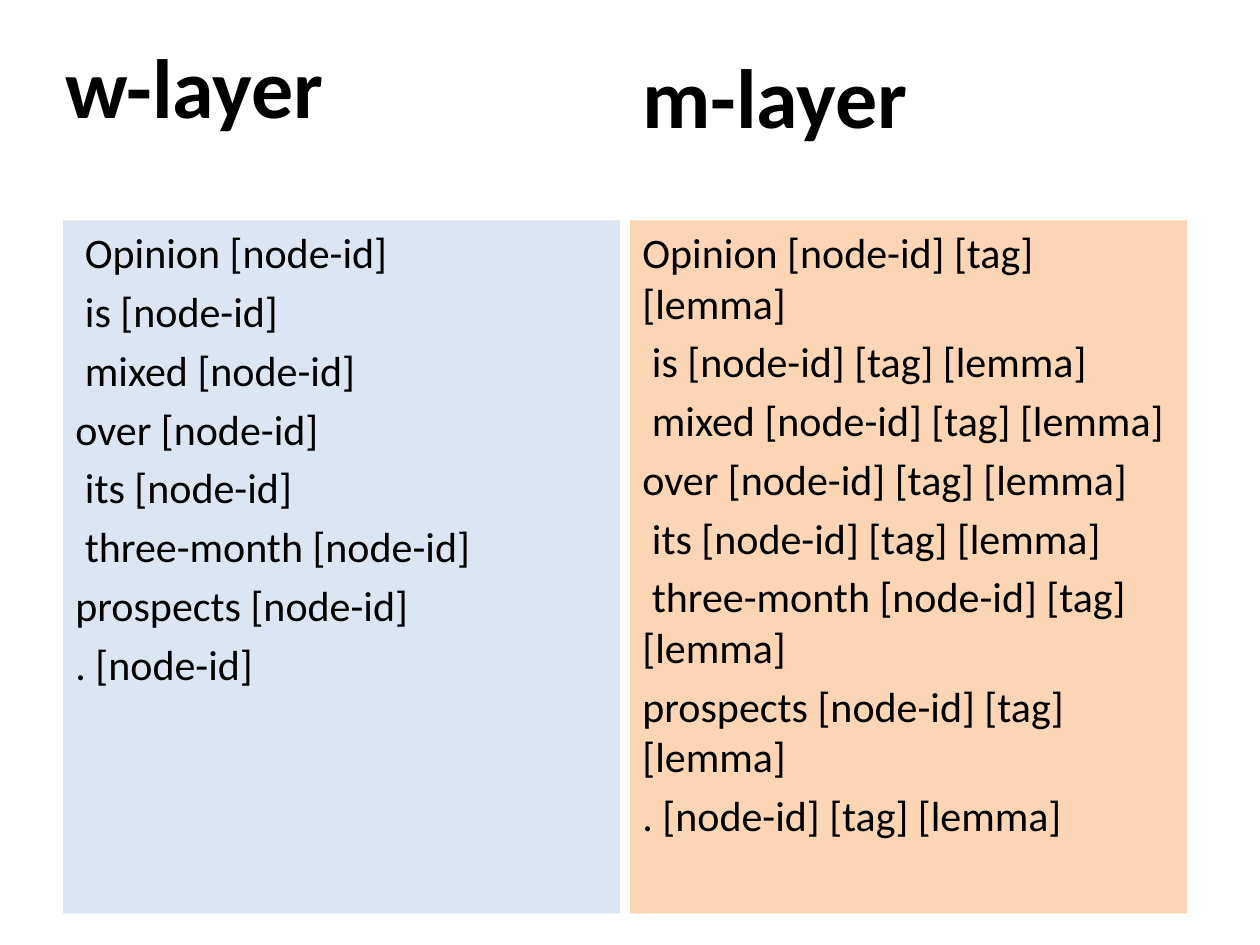
from dataclasses import dataclass

from pptx import Presentation
from pptx.dml.color import RGBColor
from pptx.enum.shapes import MSO_SHAPE
from pptx.enum.text import MSO_ANCHOR, PP_ALIGN
from pptx.slide import Slide
from pptx.text.text import TextFrame
from pptx.util import Inches, Pt

RECTANGLE = MSO_SHAPE.RECTANGLE
TOP, BOTTOM = MSO_ANCHOR.TOP, MSO_ANCHOR.BOTTOM
LEFT = PP_ALIGN.LEFT

PAGE_WIDTH, PAGE_HEIGHT = Inches(10), Inches(7.5)
COLORS = {"text": "000000", "w": "DCE6F2", "m": "FCD5B5"}
FONT = "Calibri"
SPACE_SHARE = 0.2

FIRST_COLUMN, COLUMN_PITCH, COLUMN_WIDTH = 0.05, 0.45, 0.442
TITLE_HEIGHT = 0.7 / 7.5
PANEL_TOP, PANEL_HEIGHT = 1.75 / 7.5, 5.5 / 7.5
WORDS = (" is", " mixed", "over", " its", " three-month", "prospects", ".")


@dataclass(frozen=True)
class Layer:
    title: str
    color: str
    title_shift: float
    title_top: float
    first_word: str
    fields: str

    def lines(self) -> list[str]:
        return [f"{word} {self.fields}" for word in (self.first_word, *WORDS)]


LAYERS = (
    Layer("w-layer", "w", -0.008, 0.056, " Opinion", "[node-id]"),
    Layer("m-layer", "m", 0, 0.5 / 7.5, "Opinion", "[node-id] [tag] [lemma]"),
)


def area(left: float, top: float, height: float) -> tuple[int, int, int, int]:
    return (
        round(PAGE_WIDTH * left),
        round(PAGE_HEIGHT * top),
        round(PAGE_WIDTH * COLUMN_WIDTH),
        round(PAGE_HEIGHT * height),
    )


def write(frame: TextFrame, lines: list[str], size: int, bold: bool, anchor: MSO_ANCHOR) -> None:
    frame.word_wrap = True
    frame.vertical_anchor = anchor
    frame.text = "\n".join(lines)
    for para in frame.paragraphs:
        para.alignment = LEFT
        para.space_before = Pt(size * SPACE_SHARE)
        para.font.name = FONT
        para.font.size = Pt(size)
        para.font.bold = bold
        para.font.color.rgb = RGBColor.from_string(COLORS["text"])


def draw_layer(page: Slide, layer: Layer, column: int) -> None:
    left = FIRST_COLUMN + column * COLUMN_PITCH
    title = page.shapes.add_textbox(*area(left + layer.title_shift, layer.title_top, TITLE_HEIGHT))
    write(title.text_frame, [layer.title], 48, True, BOTTOM)

    panel = page.shapes.add_shape(RECTANGLE, *area(left, PANEL_TOP, PANEL_HEIGHT))
    panel.shadow.inherit = False
    panel.fill.solid()
    panel.fill.fore_color.rgb = RGBColor.from_string(COLORS[layer.color])
    panel.line.fill.background()
    write(panel.text_frame, layer.lines(), 24, False, TOP)


def main() -> None:
    deck = Presentation()
    deck.slide_width, deck.slide_height = PAGE_WIDTH, PAGE_HEIGHT
    page = deck.slides.add_slide(deck.slide_layouts[6])
    for column, layer in enumerate(LAYERS):
        draw_layer(page, layer, column)
    deck.save("out.pptx")


if __name__ == "__main__":
    main()
